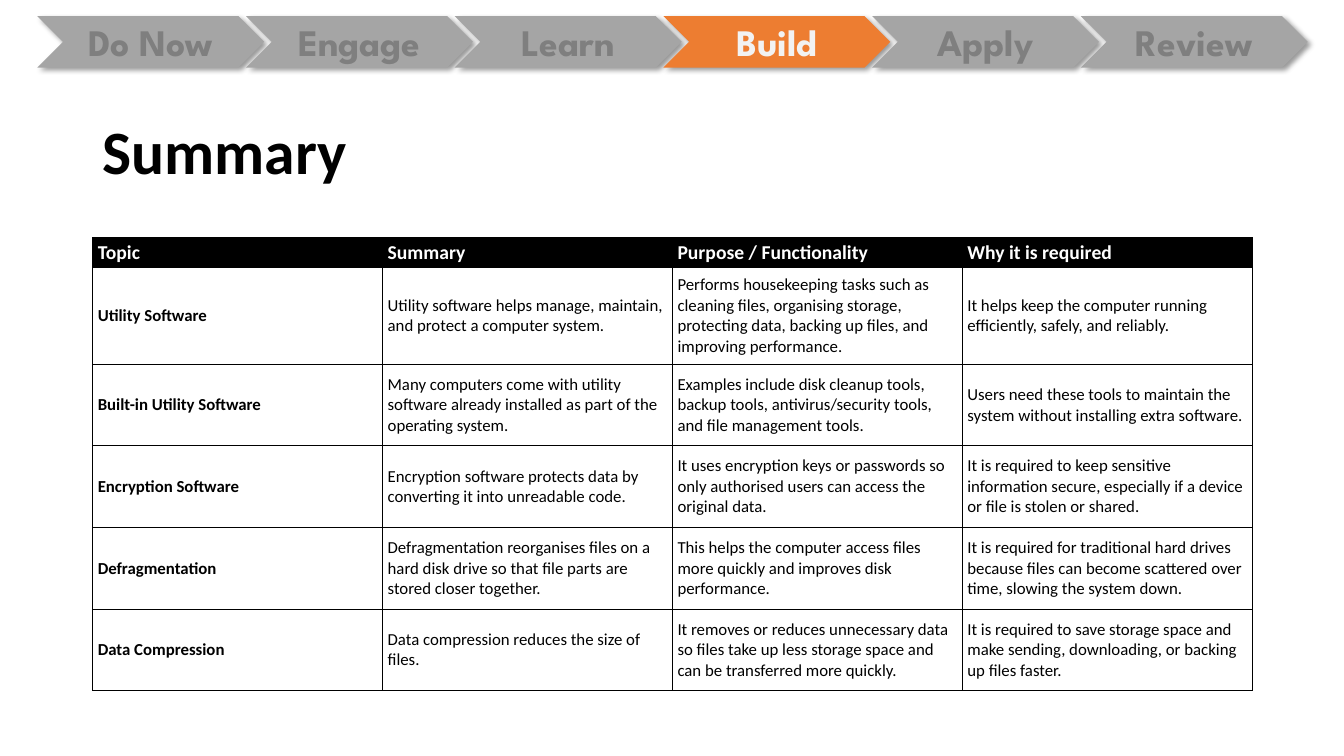
from dataclasses import dataclass
from lxml.etree import SubElement
from pptx import Presentation
from pptx.dml.color import RGBColor
from pptx.enum.shapes import MSO_SHAPE
from pptx.enum.text import MSO_ANCHOR, PP_ALIGN
from pptx.oxml.ns import qn
from pptx.util import Inches, Pt

STAGES = ["Do Now", "Engage", "Learn", "Build", "Apply", "Review"]
CURRENT_STAGE = "Build"
TITLE = "Summary"
HEADINGS = ["Topic", "Summary", "Purpose / Functionality", "Why it is required"]
TOPICS = [
    ("Utility Software",
     "Utility software helps manage, maintain, and protect a computer system.",
     "Performs housekeeping tasks such as cleaning files, organising storage, "
     "protecting data, backing up files, and improving performance.",
     "It helps keep the computer running efficiently, safely, and reliably."),
    ("Built-in Utility Software",
     "Many computers come with utility software already installed as part of the operating system.",
     "Examples include disk cleanup tools, backup tools, antivirus/security tools, "
     "and file management tools.",
     "Users need these tools to maintain the system without installing extra software."),
    ("Encryption Software",
     "Encryption software protects data by converting it into unreadable code.",
     "It uses encryption keys or passwords so only authorised users can access the original data.",
     "It is required to keep sensitive information secure, especially if a device "
     "or file is stolen or shared."),
    ("Defragmentation",
     "Defragmentation reorganises files on a hard disk drive so that file parts are "
     "stored closer together.",
     "This helps the computer access files more quickly and improves disk performance.",
     "It is required for traditional hard drives because files can become scattered "
     "over time, slowing the system down."),
    ("Data Compression",
     "Data compression reduces the size of files.",
     "It removes or reduces unnecessary data so files take up less storage space and "
     "can be transferred more quickly.",
     "It is required to save storage space and make sending, downloading, or backing "
     "up files faster."),
]


@dataclass(frozen=True)
class Theme:
    black: str = "000000"
    white: str = "FFFFFF"
    stage_fill: str = "A5A5A5"
    stage_text: str = "7F7F7F"
    current_fill: str = "ED7D31"
    current_text: str = "F2F2F2"
    stage_font: str = "League Spartan"
    body_font: str = "Calibri"
    stage_size: float = 26.7
    title_size: float = 44
    heading_size: float = 14
    body_size: float = 12


THEME = Theme()
WIDTH, HEIGHT = 13.33, 7.5
MARGIN, CONTENT_WIDTH = 0.92, 11.5
STAGE_LEFT, STAGE_TOP, STAGE_PITCH = 0.37, 0.16, 2.07
STAGE_WIDTH, STAGE_HEIGHT = 2.25, 0.51
TITLE_TOP, TITLE_HEIGHT = 0.81, 1.45
TABLE_TOP = 2.36
ROW_HEIGHTS = [0.29, 0.96] + [0.81] * (len(TOPICS) - 1)


def write(frame, text, *, size, color, font=THEME.body_font, bold=False,
          align=PP_ALIGN.LEFT, spacing=None):
    frame.word_wrap = True
    frame.vertical_anchor = MSO_ANCHOR.MIDDLE
    para = frame.paragraphs[0]
    para.alignment = align
    if spacing:
        para.line_spacing = spacing
    span = para.add_run()
    span.text = text
    span.font.size = Pt(size)
    span.font.name = font
    span.font.bold = bold
    span.font.color.rgb = RGBColor.from_string(color)


def add_shadow(shape):
    shape.shadow.inherit = False
    effects = shape._element.spPr.find(qn("a:effectLst"))
    shadow = SubElement(effects, qn("a:outerShdw"), blurRad=str(Pt(4)), dist=str(Pt(3)),
                        dir=str(45 * 60000), algn="tl", rotWithShape="0")
    color = SubElement(shadow, qn("a:srgbClr"), val=THEME.black)
    SubElement(color, qn("a:alpha"), val="40000")


def add_borders(cell):
    properties = cell._tc.get_or_add_tcPr()
    for side in ("lnL", "lnR", "lnT", "lnB"):
        line = SubElement(properties, qn(f"a:{side}"), w=str(Pt(1)))
        fill = SubElement(line, qn("a:solidFill"))
        SubElement(fill, qn("a:srgbClr"), val=THEME.black)


def add_stages(page):
    for index, stage in enumerate(STAGES):
        current = stage == CURRENT_STAGE
        chevron = page.shapes.add_shape(
            MSO_SHAPE.CHEVRON, Inches(STAGE_LEFT + index * STAGE_PITCH), Inches(STAGE_TOP),
            Inches(STAGE_WIDTH), Inches(STAGE_HEIGHT))
        chevron.fill.solid()
        chevron.fill.fore_color.rgb = RGBColor.from_string(
            THEME.current_fill if current else THEME.stage_fill)
        chevron.line.fill.background()
        add_shadow(chevron)
        write(chevron.text_frame, stage, size=THEME.stage_size, font=THEME.stage_font,
              color=THEME.current_text if current else THEME.stage_text,
              bold=True, align=PP_ALIGN.CENTER)


def add_title(page):
    box = page.shapes.add_textbox(Inches(MARGIN), Inches(TITLE_TOP),
                                  Inches(CONTENT_WIDTH), Inches(TITLE_HEIGHT))
    write(box.text_frame, TITLE, size=THEME.title_size, color=THEME.black,
          bold=True, spacing=0.9)


def add_summary_table(page):
    rows = [HEADINGS, *TOPICS]
    table = page.shapes.add_table(
        len(rows), len(HEADINGS), Inches(MARGIN), Inches(TABLE_TOP),
        Inches(CONTENT_WIDTH), Inches(sum(ROW_HEIGHTS))).table
    table.horz_banding = False
    for column in table.columns:
        column.width = Inches(CONTENT_WIDTH / len(HEADINGS))
    for row_index, texts in enumerate(rows):
        table.rows[row_index].height = Inches(ROW_HEIGHTS[row_index])
        heading = row_index == 0
        for column_index, text in enumerate(texts):
            cell = table.cell(row_index, column_index)
            cell.margin_left = cell.margin_right = Inches(0.05)
            cell.margin_top = cell.margin_bottom = Inches(0.03)
            add_borders(cell)
            if heading:
                cell.fill.solid()
                cell.fill.fore_color.rgb = RGBColor.from_string(THEME.black)
            else:
                cell.fill.background()
            write(cell.text_frame, text,
                  size=THEME.heading_size if heading else THEME.body_size,
                  color=THEME.white if heading else THEME.black,
                  bold=heading or column_index == 0)
            cell.vertical_anchor = MSO_ANCHOR.MIDDLE


def main():
    deck = Presentation()
    deck.slide_width, deck.slide_height = Inches(WIDTH), Inches(HEIGHT)
    page = deck.slides.add_slide(deck.slide_layouts[6])
    add_stages(page)
    add_title(page)
    add_summary_table(page)
    deck.save("out.pptx")


if __name__ == "__main__":
    main()
